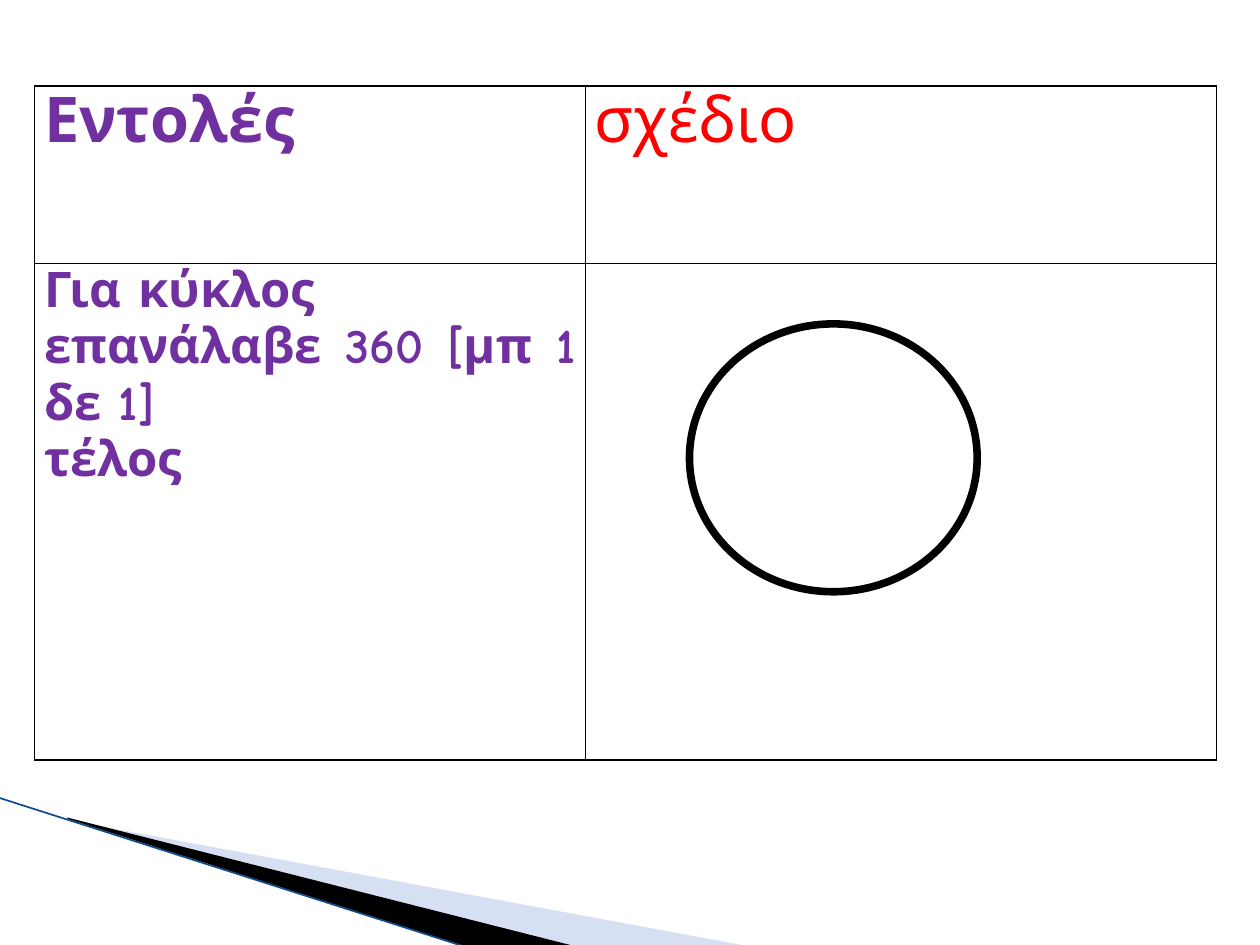
from lxml.etree import SubElement
from pptx import Presentation
from pptx.dml.color import RGBColor
from pptx.enum.shapes import MSO_CONNECTOR, MSO_SHAPE
from pptx.enum.text import PP_ALIGN
from pptx.oxml import parse_xml
from pptx.oxml.ns import nsdecls, qn
from pptx.util import Cm, Pt


def rgb(value):
    return RGBColor.from_string(value)


def add_text(p, text, size=28, color="7030A0", bold=True):
    p.alignment = PP_ALIGN.JUSTIFY
    r = p.add_run()
    r.text = text
    r.font.name = "Comic Neue"
    r.font.size = Pt(size)
    r.font.bold = bold
    r.font.color.rgb = rgb(color)


prs = Presentation()
prs.slide_width, prs.slide_height = Cm(25.4), Cm(19.05)
s = prs.slides.add_slide(prs.slide_layouts[6])

wedges = [
    ("9DB2E1", 40, [(1.4, 16.54), (15.11, 19.08), (11.58, 19.08), (1.4, 16.51)]),
    ("000000", 100, [(1.35, 16.48), (11.61, 19.08), (9.45, 19.1), (1.37, 16.51)]),
]
for color, opacity, points in wedges:
    points = [(Cm(x), Cm(y)) for x, y in points]
    builder = s.shapes.build_freeform(*points[0])
    builder.add_line_segments(points[1:], close=True)
    sp = builder.convert_to_shape()
    sp.shadow.inherit = False
    sp.fill.solid()
    sp.fill.fore_color.rgb = rgb(color)
    sp.line.fill.background()
    if opacity < 100:
        clr = sp.fill._xPr.find(".//" + qn("a:srgbClr"))
        SubElement(clr, qn("a:alpha"), val=str(opacity * 1000))

edge = s.shapes.add_connector(
    MSO_CONNECTOR.STRAIGHT, Cm(-0.03), Cm(16.08), Cm(9.42), Cm(19.1))
edge.line.color.rgb = rgb("0F4C8F")
edge.line.width = Pt(0.95)
SubElement(edge._element.spPr, qn("a:effectLst"))

table = s.shapes.add_table(2, 2, Cm(0.7), Cm(1.73), Cm(23.82), Cm(13.59)).table
table.first_row = table.horz_banding = False
for column, width in zip(table.columns, (11.1, 12.72)):
    column.width = Cm(width)
for row, height in zip(table.rows, (3.58, 10.01)):
    row.height = Cm(height)

for cell in table.iter_cells():
    cell.margin_left = cell.margin_right = Cm(0.19)
    cell.margin_top = cell.margin_bottom = 0
    cell.fill.background()
    for i, side in enumerate("LRTB"):
        cell._tc.get_or_add_tcPr().insert(i, parse_xml(
            f'<a:ln{side} {nsdecls("a")} w="{Pt(1)}"><a:solidFill>'
            f'<a:srgbClr val="000000"/></a:solidFill></a:ln{side}>'))

add_text(table.cell(0, 0).text_frame.paragraphs[0], "Εντολές", size=36)
add_text(table.cell(0, 1).text_frame.paragraphs[0], "σχέδιο",
         size=36, color="FF0000", bold=False)
tf = table.cell(1, 0).text_frame
commands = ["Για κύκλος", "επανάλαβε 360 [μπ 1 δε 1]", "τέλος"]
for i, command in enumerate(commands):
    p = tf.add_paragraph() if i else tf.paragraphs[0]
    add_text(p, command)

circle = s.shapes.add_shape(
    MSO_SHAPE.OVAL, Cm(13.9), Cm(6.53), Cm(5.8), Cm(5.4))
circle.shadow.inherit = False
circle.fill.solid()
circle.fill.fore_color.rgb = rgb("FFFFFF")
circle.line.color.rgb = rgb("000000")
circle.line.width = Pt(4.33)

prs.save("out.pptx")
